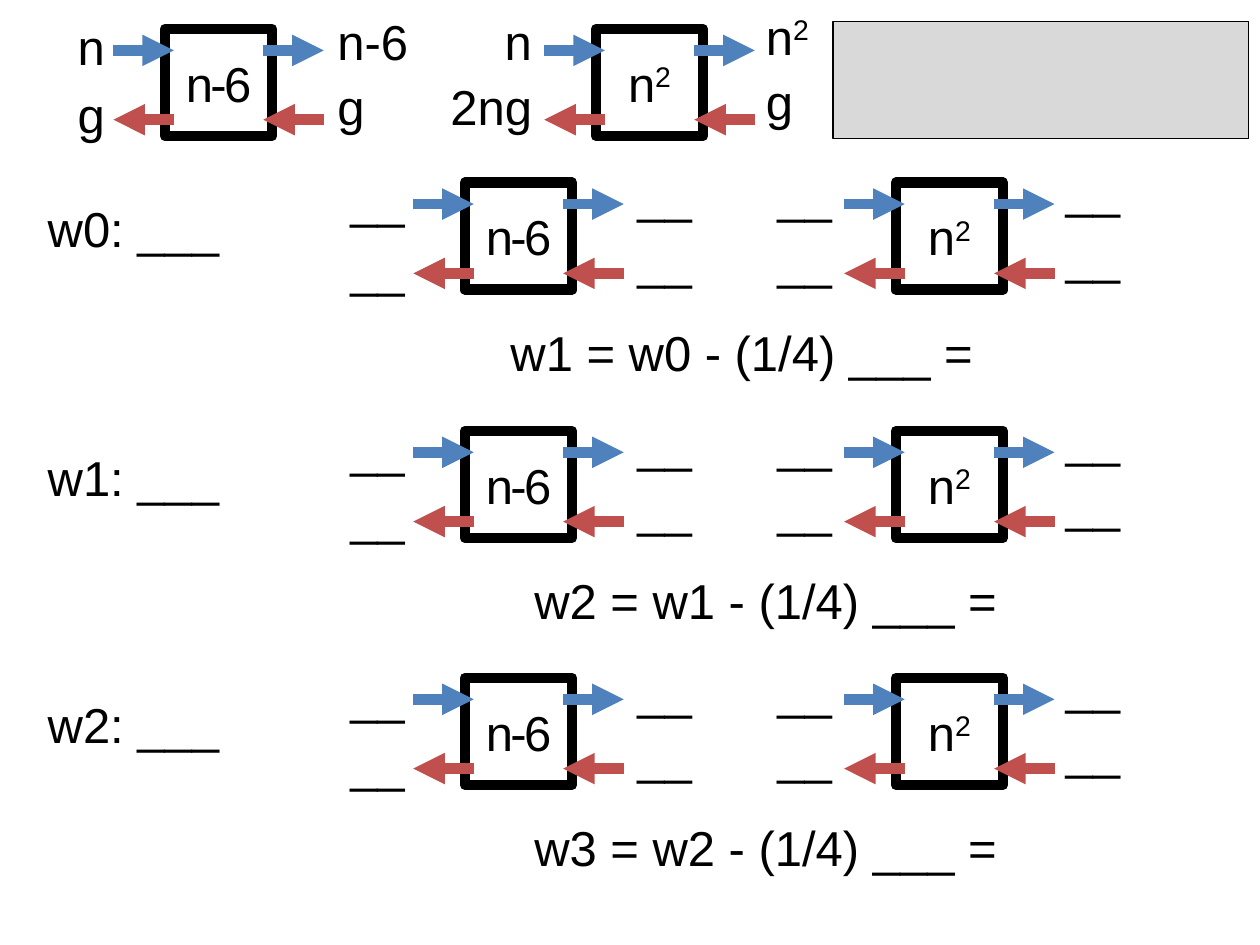
"""Build a worksheet slide of forward and backward passes through n-6 and n²."""
from lxml import etree
from pptx import Presentation
from pptx.dml.color import RGBColor
from pptx.enum.shapes import MSO_CONNECTOR, MSO_SHAPE
from pptx.enum.text import MSO_ANCHOR, MSO_AUTO_SIZE, PP_ALIGN
from pptx.oxml.ns import qn
from pptx.util import Pt

RECTANGLE = MSO_SHAPE.RECTANGLE
STRAIGHT = MSO_CONNECTOR.STRAIGHT
LEFT, CENTER, RIGHT = PP_ALIGN.LEFT, PP_ALIGN.CENTER, PP_ALIGN.RIGHT
MIDDLE = MSO_ANCHOR.MIDDLE
FIT_TEXT = MSO_AUTO_SIZE.SHAPE_TO_FIT_TEXT

PX = 9144
COLORS = {"black": "000000", "white": "FFFFFF", "gray": "D9D9D9",
          "forward": "4F81BD", "backward": "C0504D"}
FONT, FONT_SIZE = "Arial", 28
SUPERSCRIPTS = {"²": "2"}

BOX, TEXT_HEIGHT = 85, 57
ARROW_IN, ARROW_OUT = (-41, 7), (78, 126)
FORWARD_Y, BACKWARD_Y = 17, 72
INPUT_WIDTHS_HEADER, INPUT_WIDTHS_STEP = (49, 115), (85, 115)

GATES = {
    "n-6": {"input_right": -38, "input_tops": (-15, 39),
            "output_left": 127, "output_tops": (-19, 33)},
    "n²": {"input_right": -41, "input_tops": (-19, 33),
           "output_left": 125, "output_tops": (-23, 29)},
}
HEADER_TOP = 23
HEADER = [("n²", 473, ("n", "2ng"), ("n²", "g")),
          ("n-6", 131, ("n", "g"), ("n-6", "g"))]
STEP_GATES = [("n²", 711), ("n-6", 369)]
BLANKS = ("__", "__")
STEPS = [(145, "w0: ___", 327, "w1 = w0 - (1/4) ___ = "),
         (342, "w1: ___", 346, "w2 = w1 - (1/4) ___ = "),
         (538, "w2: ___", 346, "w3 = w2 - (1/4) ___ = ")]


def color(name):
    return RGBColor.from_string(COLORS[name])


def px(*lengths):
    return [length * PX for length in lengths]


def write(shape, text, alignment, spacing=None):
    paragraph = shape.text_frame.paragraphs[0]
    paragraph.alignment = alignment
    base = text.rstrip("²")
    for part in (base, *text[len(base):]):
        run = paragraph.add_run()
        run.text = SUPERSCRIPTS.get(part, part)
        run.font.name, run.font.size = FONT, Pt(FONT_SIZE)
        run.font.color.rgb = color("black")
        properties = run.font._element
        if part in SUPERSCRIPTS:
            properties.set("baseline", "30000")
        if spacing:
            properties.set("spc", str(spacing))


def add_label(shapes, text, left, top, width, alignment=LEFT):
    label = shapes.add_textbox(*px(left, top, width, TEXT_HEIGHT))
    label.text_frame.word_wrap = True
    label.text_frame.auto_size = FIT_TEXT
    write(label, text, alignment)


def add_box(shapes, left, top, width, height, fill, line_width):
    box = shapes.add_shape(RECTANGLE, *px(left, top, width, height))
    box.shadow.inherit = False
    box.fill.solid()
    box.fill.fore_color.rgb = color(fill)
    box.line.color.rgb = color("black")
    box.line.width = Pt(line_width)
    return box


def add_arrow(shapes, start, end, y, name):
    arrow = shapes.add_connector(STRAIGHT, *px(start, y, end, y))
    arrow.line.color.rgb = color(name)
    arrow.line.width = Pt(6)
    etree.SubElement(arrow.line._get_or_add_ln(), qn("a:tailEnd"), type="triangle")
    etree.SubElement(arrow._element.spPr, qn("a:effectLst"))


def add_gate(shapes, name, left, top, inputs, outputs, input_widths):
    gate = GATES[name]
    box = add_box(shapes, left, top, BOX, BOX, "white", 6)
    box.text_frame.vertical_anchor = MIDDLE
    box.text_frame.word_wrap = False
    write(box, name, CENTER, spacing=-150)
    for start, end in (ARROW_IN, ARROW_OUT):
        add_arrow(shapes, left + start, left + end, top + FORWARD_Y, "forward")
        add_arrow(shapes, left + end, left + start, top + BACKWARD_Y, "backward")
    for text, offset, width in zip(inputs, gate["input_tops"], input_widths):
        right = left + gate["input_right"]
        add_label(shapes, text, right - width, top + offset, width, RIGHT)
    for text, offset in zip(outputs, gate["output_tops"]):
        add_label(shapes, text, left + gate["output_left"], top + offset, 85)


def main():
    presentation = Presentation()
    presentation.slide_width, presentation.slide_height = px(1000, 750)
    slide = presentation.slides.add_slide(presentation.slide_layouts[6])

    add_box(slide.shapes, 661, 17, 330, 93, "gray", 1)
    for name, left, inputs, outputs in HEADER:
        group = slide.shapes.add_group_shape()
        add_gate(group.shapes, name, left, HEADER_TOP, inputs, outputs,
                 INPUT_WIDTHS_HEADER)
    for top, weight, update_left, update in STEPS:
        group = slide.shapes.add_group_shape()
        for name, left in STEP_GATES:
            add_gate(group.shapes, name, left, top, BLANKS, BLANKS, INPUT_WIDTHS_STEP)
        add_label(group.shapes, weight, 28, top + 8, 181)
        add_label(slide.shapes, update, update_left, top + 106, 534, CENTER)

    presentation.save("out.pptx")


if __name__ == "__main__":
    main()
